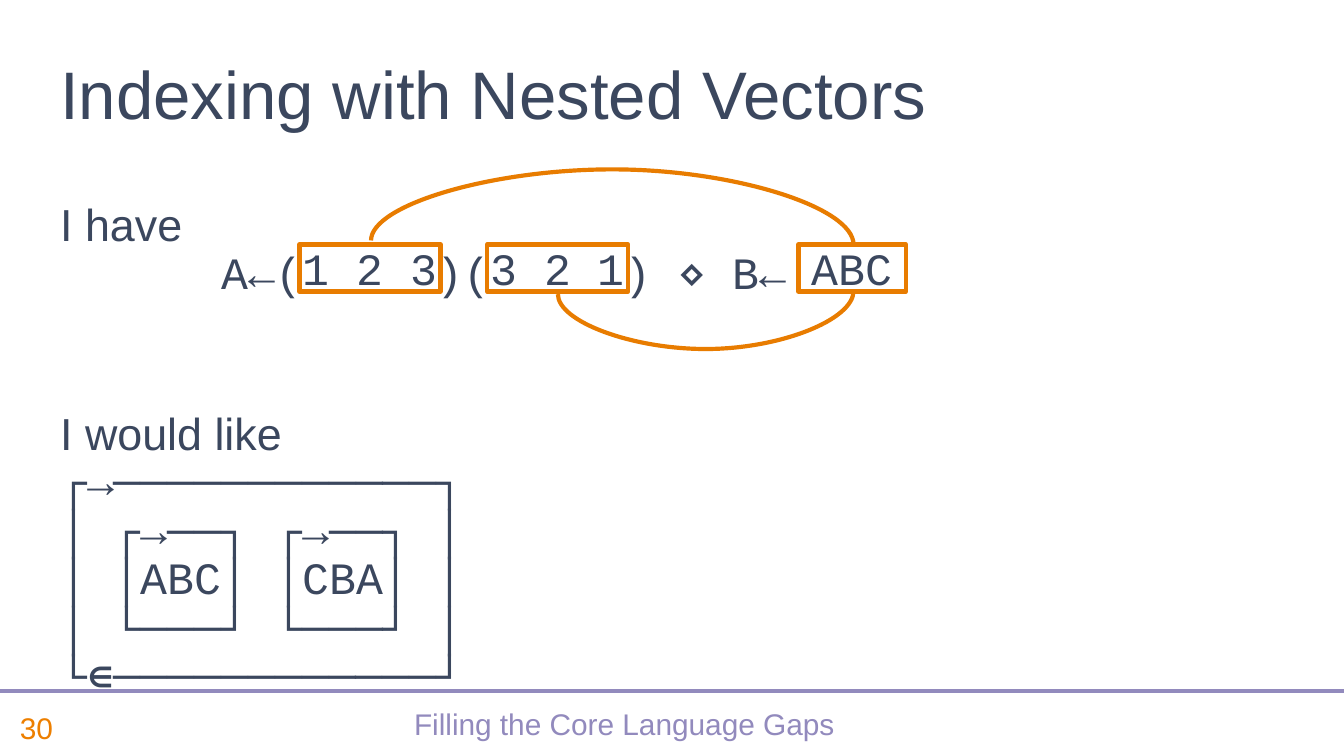
from dataclasses import dataclass

from lxml import etree
from pptx import Presentation, util as u
from pptx.dml.color import RGBColor
from pptx.enum import shapes, text
from pptx.oxml import ns

Pt = u.Pt
INK = {"text": "3B475E", "box": "E87C00", "page": "ED7F00",
       "rule": "928ABD", "white": "FFFFFF"}
SANS, MONO = "Arial", "Courier New"
CELL = 14.4  # width of one code character at 24 pt
TREE = ["┌→────────────┐",
        "│ ┌→──┐ ┌→──┐ │",
        "│ │ABC│ │CBA│ │",
        "│ └───┘ └───┘ │",
        "└∊────────────┘"]


@dataclass
class Label:
    words: str
    left: float
    top: float
    width: float
    height: float
    size: int
    color: str
    anchor: text.MSO_ANCHOR = text.MSO_ANCHOR.MIDDLE
    align: text.PP_ALIGN = text.PP_ALIGN.LEFT
    pitch: float = 1.0


@dataclass
class Box:
    words: str
    left: float
    width: float
    fill: bool = False


@dataclass
class Arc:
    left: float
    top: float
    width: float
    height: float
    turn: int
    flip: bool = False


LABELS = [
    Label("Filling the Core Language Gaps", 56.2, 373.7, 556.6, 31.7, 16, "rule",
          align=text.PP_ALIGN.CENTER, pitch=0.8),
    Label("30", 3.6, 373.7, 52.6, 31.7, 16, "page"),
    Label("Indexing with Nested Vectors", 25.2, 20.9, 551.5, 54, 36, "text",
          text.MSO_ANCHOR.BOTTOM),
]
BOXES = [Box("1 2 3", 160.4, 75.6), Box("3 2 1", 260.9, 75.6, True),
         Box("ABC", 427.8, 57.6)]
ARCS = [Arc(377.2, 77.5, 1.72, 158.4, 90),
        Arc(326.9, 0.7, 2.24, 258.5, 270, True)]


def rgb(name: str) -> RGBColor:
    return RGBColor.from_string(INK[name])


def style(par, face: str, size: int, color: str) -> None:
    par.font.name = face
    par.font.size = Pt(size)
    par.font.color.rgb = rgb(color)


def stroke(item) -> None:
    """Drop the theme shadow of a connector."""
    etree.SubElement(item._element.spPr, ns.qn("a:effectLst"))


def add_label(slide, lab: Label) -> None:
    box = slide.shapes.add_textbox(Pt(lab.left), Pt(lab.top),
                                   Pt(lab.width), Pt(lab.height))
    frame = box.text_frame
    frame.word_wrap = True
    frame.vertical_anchor = lab.anchor
    par = frame.paragraphs[0]
    par.text = lab.words
    par.alignment = lab.align
    par.line_spacing = lab.pitch
    style(par, SANS, lab.size, lab.color)


def add_tabs(par, stops: list[float]) -> None:
    tabs = etree.SubElement(par._p.get_or_add_pPr(), ns.qn("a:tabLst"))
    for stop in stops:
        etree.SubElement(tabs, ns.qn("a:tab"), pos=str(Pt(stop)), algn="l")


def add_body(slide) -> None:
    frame = slide.shapes.add_textbox(Pt(25.2), Pt(102), Pt(671.8), Pt(281.7)).text_frame
    frame.word_wrap = True
    rows = [("I have", SANS, 0), ("\tA←(\t)(\t) ⋄ B←", MONO, 0),
            ("I would like", SANS, 57), ("\v".join(TREE), MONO, 0)]
    for i, (words, face, gap) in enumerate(rows):
        par = frame.add_paragraph() if i else frame.paragraphs[0]
        par.text = words
        if face == MONO:
            par.line_spacing = 0.9
        if gap:
            par.space_before = Pt(gap)
        if "\t" in words:
            add_tabs(par, [CELL * col for col in (6, 14, 21)])
        style(par, face, 24, "text")


def add_box(slide, box: Box) -> None:
    item = slide.shapes.add_shape(shapes.MSO_SHAPE.RECTANGLE, Pt(box.left), Pt(131),
                                  Pt(box.width), Pt(25.2))
    item.shadow.inherit = False
    if box.fill:
        item.fill.solid()
        item.fill.fore_color.rgb = rgb("white")
    else:
        item.fill.background()
    item.line.color.rgb = rgb("box")
    item.line.width = Pt(2.25)
    frame = item.text_frame
    frame.margin_left = frame.margin_right = 0
    frame.margin_top = frame.margin_bottom = 0
    frame.word_wrap = False
    frame.vertical_anchor = text.MSO_ANCHOR.MIDDLE
    par = frame.paragraphs[0]
    par.text = box.words
    par.alignment = text.PP_ALIGN.CENTER
    style(par, MONO, 24, "text")


def add_line(slide, kind, left: float, top: float, right: float, base: float, color: str):
    item = slide.shapes.add_connector(kind, Pt(left), Pt(top), Pt(right), Pt(base))
    item.line.color.rgb = rgb(color)
    item.line.width = Pt(2.25)
    stroke(item)
    return item


def add_arc(slide, arc: Arc) -> None:
    """Turn a thin curved connector so that it bulges 18 times its width."""
    item = add_line(slide, shapes.MSO_CONNECTOR.CURVE, arc.left, arc.top,
                    arc.left + arc.width, arc.top + arc.height, "box")
    props = item._element.spPr
    frame = props.find(ns.qn("a:xfrm"))
    frame.set("rot", str(arc.turn * 60000))
    if arc.flip:
        frame.set("flipV", "1")
    guides = props.find(ns.qn("a:prstGeom")).get_or_add_avLst()
    etree.SubElement(guides, ns.qn("a:gd"), name="adj1", fmla="val 1800000")


def main() -> None:
    deck = Presentation()
    deck.slide_width, deck.slide_height = Pt(720), Pt(405)
    slide = deck.slides.add_slide(deck.slide_layouts[6])
    add_line(slide, shapes.MSO_CONNECTOR.STRAIGHT, 0, 370, 720, 370, "rule")
    add_body(slide)
    for lab in LABELS:
        add_label(slide, lab)
    for box in BOXES:
        add_box(slide, box)
    for arc in ARCS:
        add_arc(slide, arc)
    deck.save("out.pptx")


if __name__ == "__main__":
    main()
